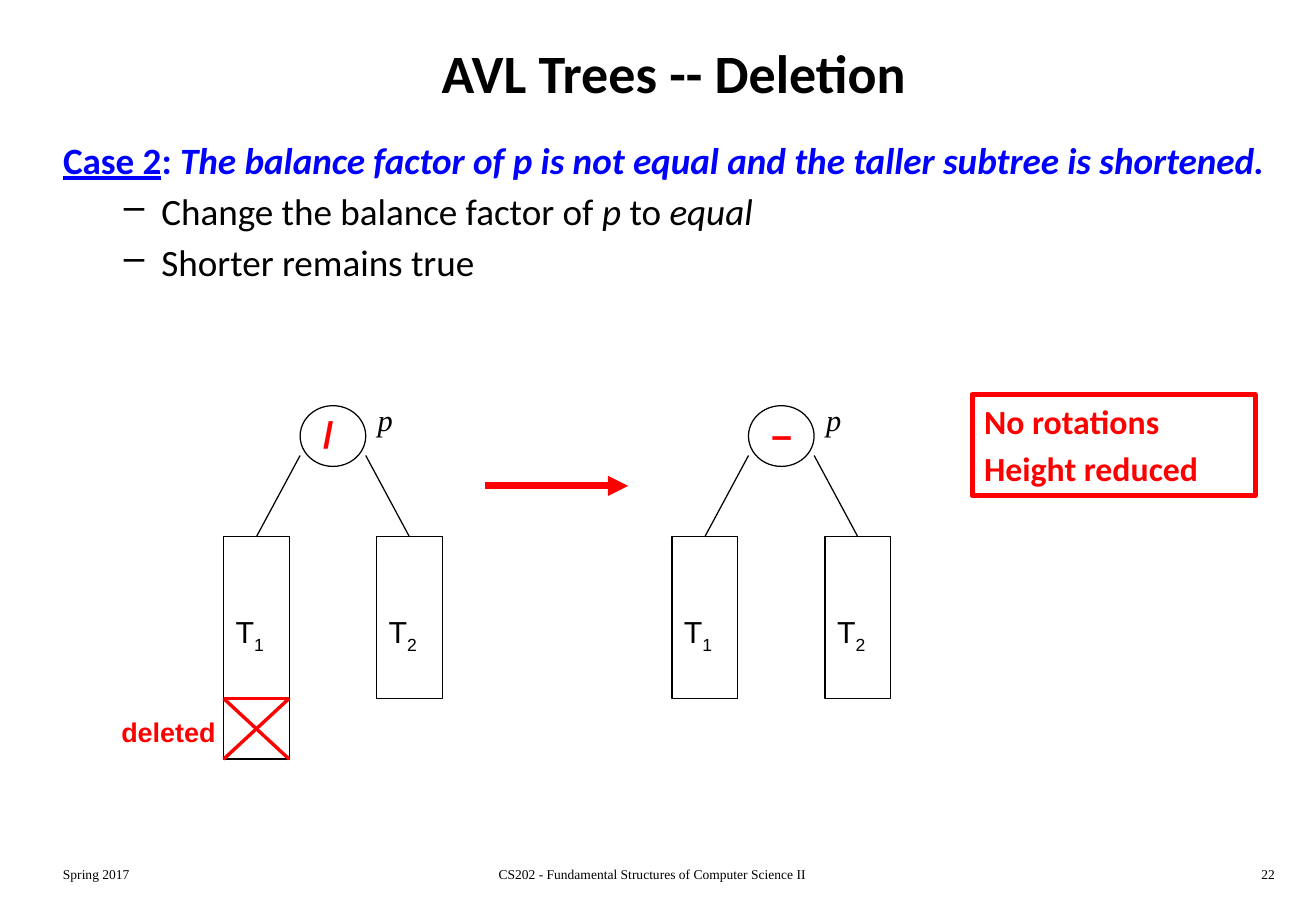
from lxml.etree import SubElement
from pptx import Presentation
from pptx.dml.color import RGBColor
from pptx.enum.shapes import MSO_CONNECTOR, MSO_SHAPE
from pptx.enum.text import MSO_ANCHOR, PP_ALIGN
from pptx.oxml.ns import qn
from pptx.util import Inches, Pt

BLACK, RED, BLUE = "000000", "FF0000", "0000FF"
SERIF, SANS, MAIN = "Times New Roman", "Arial", "Calibri"


def paint(target, color):
    """Give a font or a line a solid colour."""
    target.fill.solid()
    target.fill.fore_color.rgb = RGBColor.from_string(color)


def style(para, size, face, color=BLACK, bold=False, italic=None):
    """Set the font of a whole paragraph."""
    font = para.font
    font.size, font.name, font.bold, font.italic = Pt(size), face, bold, italic
    paint(font, color)


def label(slide, box, text, size, face, align=PP_ALIGN.LEFT, **look):
    """Add a one-paragraph text box."""
    frame = slide.shapes.add_textbox(*map(Inches, box)).text_frame
    frame.word_wrap = True
    para = frame.paragraphs[0]
    para.text, para.alignment = text, align
    style(para, size, face, **look)
    return para


def outline(slide, kind, box, color=BLACK, width=0.75):
    """Add an unfilled preset shape."""
    shape = slide.shapes.add_shape(kind, *map(Inches, box))
    shape.shadow.inherit = False
    shape.fill.background()
    paint(shape.line, color)
    shape.line.width = Pt(width)
    return shape


def line(slide, start, end, color=BLACK, width=0.75):
    """Add a straight line without a shadow."""
    link = slide.shapes.add_connector(
        MSO_CONNECTOR.STRAIGHT, *map(Inches, start + end))
    paint(link.line, color)
    link.line.width = Pt(width)
    SubElement(link._element.spPr, qn("a:effectLst"))
    return link


def arrow(slide, start, end):
    """Add a thick red arrow."""
    link = line(slide, start, end, RED, 4)
    SubElement(link.line._get_or_add_ln(), qn("a:tailEnd"), type="triangle")


def subtree(slide, left, height, index, joint):
    """Add a subtree box, its name and the edge to its parent."""
    box = outline(slide, MSO_SHAPE.RECTANGLE, (left, 4.42, 0.54, height))
    edge = line(slide, (joint, 3.75), (left + 0.27, 4.42))
    edge.end_connect(box, 0)
    para = label(slide, (left, 5, 0.54, 0.4), "T", 18, SANS)
    run = para.add_run()
    run.text = index
    run.font._element.set("baseline", "-25000")


def tree(slide, left, sign, first):
    """Add a node p with a balance sign and two subtrees."""
    node = left + 0.63
    outline(slide, MSO_SHAPE.OVAL, (node, 3.34, 0.54, 0.5))
    label(slide, (left + 0.72, 3.34, 0.45, 0.47), sign, 22, SANS,
          color=RED, bold=True)
    label(slide, (node + 0.54, 3.25, 0.63, 0.4), "p", 18, SERIF, italic=True)
    subtree(slide, left, first, "1", node)
    subtree(slide, left + 1.26, 1.33, "2", node + 0.54)


def crossed(slide, left, top):
    """Mark the removed part of a subtree."""
    right, low = left + 0.54, top + 0.5
    for start, end in (((left, top), (right, top)),
                       ((left, top), (right, low)),
                       ((right, top), (left, low))):
        line(slide, start, end, RED, 2)
    label(slide, (0.9, 5.84, 1.26, 0.37), "deleted", 16, SANS,
          color=RED, bold=True)


def bullet(frame, parts):
    """Add a dashed item from (text, italic) parts."""
    para = frame.add_paragraph()
    para.space_before = Pt(4)
    props = para._p.get_or_add_pPr()
    props.set("marL", str(Inches(0.81)))
    props.set("indent", str(Inches(-0.31)))
    SubElement(props, qn("a:buChar"), char="–")
    style(para, 22, MAIN)
    for text, italic in parts:
        run = para.add_run()
        run.text, run.font.italic = text, italic


def body(slide):
    """Add the case heading and its items."""
    box = slide.shapes.add_textbox(*map(Inches, (0.42, 1.08, 10.41, 1.58)))
    frame = box.text_frame
    frame.word_wrap = True
    head = frame.paragraphs[0]
    style(head, 22, MAIN, BLUE, True)
    claim = ("The balance factor of p is not equal "
             "and the taller subtree is shortened.")
    for text, under, italic in (("Case 2", True, False), (": ", False, False),
                                (claim, False, True)):
        run = head.add_run()
        run.text = text
        run.font.underline, run.font.italic = under, italic
    bullet(frame, [("Change the balance factor of ", False), ("p ", True),
                   ("to ", False), ("equal", True)])
    bullet(frame, [("Shorter remains true", False)])


def result(slide):
    """Add the framed outcome."""
    box = outline(slide, MSO_SHAPE.RECTANGLE, (8, 3.25, 2.33, 0.83), RED, 3)
    frame = box.text_frame
    frame.vertical_anchor = MSO_ANCHOR.TOP
    frame.text = "No rotations\nHeight reduced"
    for para in frame.paragraphs:
        para.alignment = PP_ALIGN.LEFT
        style(para, 20, MAIN, RED, True)
    frame.paragraphs[1].space_before = Pt(4)


def title(slide, text):
    """Place and format the title."""
    shape = slide.shapes.title
    shape.left, shape.top, shape.width, shape.height = map(
        Inches, (0.42, 0.17, 10.25, 0.84))
    shape.text_frame.text = text
    shape.text_frame.vertical_anchor = MSO_ANCHOR.MIDDLE
    para = shape.text_frame.paragraphs[0]
    para.alignment = PP_ALIGN.CENTER
    style(para, 32, MAIN, bold=True)


def footer(slide):
    """Add the three footer texts."""
    course = "CS202 - Fundamental Structures of Computer Science II"
    for left, width, text, align in (
            (0.42, 2.26, "Spring 2017", PP_ALIGN.LEFT),
            (3.34, 4.06, course, PP_ALIGN.CENTER),
            (8.33, 2.26, "22", PP_ALIGN.RIGHT)):
        label(slide, (left, 7.08, width, 0.25), text, 8, SERIF, align)


def main():
    """Build the slide and save it."""
    deck = Presentation()
    deck.slide_width, deck.slide_height = Inches(10.83), Inches(7.5)
    slide = deck.slides.add_slide(deck.slide_layouts[5])
    title(slide, "AVL Trees -- Deletion")
    body(slide)
    footer(slide)
    tree(slide, 1.84, "/", 1.83)
    crossed(slide, 1.84, 5.75)
    tree(slide, 5.53, "–", 1.33)
    arrow(slide, (3.99, 4), (5.17, 4))
    result(slide)
    deck.save("out.pptx")


if __name__ == "__main__":
    main()
